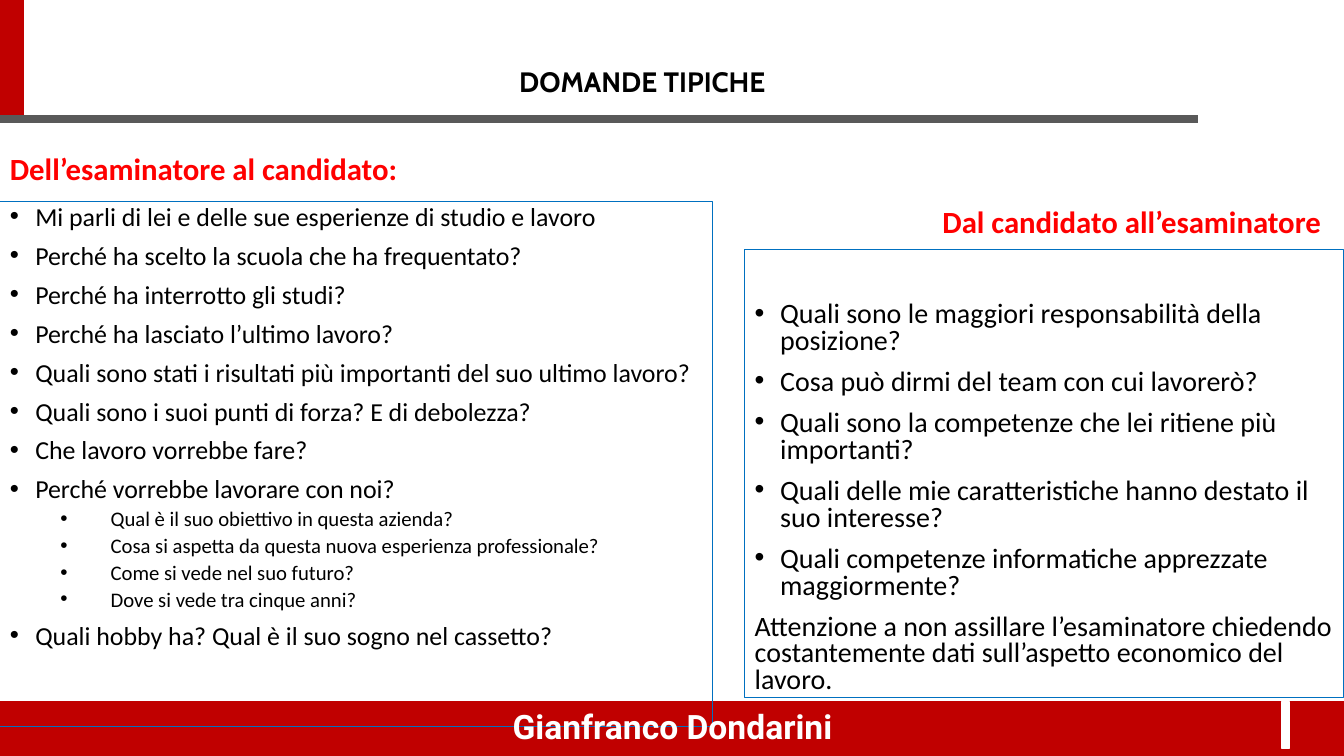
from lxml.etree import SubElement
from pptx import Presentation
from pptx.dml.color import RGBColor
from pptx.enum.shapes import MSO_CONNECTOR as Connector, MSO_SHAPE as Shape
from pptx.enum.text import MSO_ANCHOR as Anchor, PP_ALIGN as Align
from pptx.oxml.ns import qn
from pptx.util import Cm, Pt

BRAND_RED = RGBColor(0xC0, 0x00, 0x00)
HEADING_RED = RGBColor(0xFF, 0x00, 0x00)
GREY = RGBColor(0x59, 0x59, 0x59)
BLUE = RGBColor(0x00, 0x70, 0xC0)
BLACK = RGBColor(0x00, 0x00, 0x00)
WHITE = RGBColor(0xFF, 0xFF, 0xFF)

EXAMINER_QUESTIONS = [
    "Mi parli di lei e delle sue esperienze di studio e lavoro",
    "Perché ha scelto la scuola che ha frequentato?",
    "Perché ha interrotto gli studi?",
    "Perché ha lasciato l’ultimo lavoro?",
    "Quali sono stati i risultati più importanti del suo ultimo lavoro?",
    "Quali sono i suoi punti di forza? E di debolezza?",
    "Che lavoro vorrebbe fare?",
    "Perché vorrebbe lavorare con noi?",
]
COMPANY_QUESTIONS = [
    "Qual è il suo obiettivo in questa azienda?",
    "Cosa si aspetta da questa nuova esperienza professionale?",
    "Come si vede nel suo futuro?",
    "Dove si vede tra cinque anni?",
]
CLOSING_QUESTION = "Quali hobby ha? Qual è il suo sogno nel cassetto?"
CANDIDATE_QUESTIONS = [
    "Quali sono le maggiori responsabilità della posizione?",
    "Cosa può dirmi del team con cui lavorerò?",
    "Quali sono la competenze che lei ritiene più importanti?",
    "Quali delle mie caratteristiche hanno destato il suo interesse?",
    "Quali competenze informatiche apprezzate maggiormente?",
]
WARNING = ("Attenzione a non assillare l’esaminatore chiedendo costantemente "
           "dati sull’aspetto economico del lavoro.")


def write(paragraph, text, size=20, font="Calibri", color=BLACK, bold=False,
          align=Align.LEFT, line_spacing=None, before=0, indent=None, level=0):
    """Fill one paragraph; indent is (left margin, hanging) in cm and adds a bullet."""
    paragraph.level = level
    paragraph.alignment = align
    paragraph.space_before = Pt(before)
    if line_spacing:
        paragraph.line_spacing = line_spacing
    if indent:
        margin, hanging = indent
        properties = paragraph._p.get_or_add_pPr()
        properties.set("marL", str(Cm(margin)))
        properties.set("indent", str(-Cm(hanging)))
        SubElement(properties, qn("a:buFont"), typeface="Arial")
        SubElement(properties, qn("a:buChar"), char="•")
    run = paragraph.add_run()
    run.text = text
    run.font.size = Pt(size)
    run.font.name = font
    run.font.bold = bold
    run.font.color.rgb = color


class QuestionSlide:
    bullet = dict(indent=(0.64, 0.64), before=10, line_spacing=0.8)
    sub_bullet = dict(indent=(2.54, 1.27), before=5, line_spacing=0.8, level=1)
    plain = dict(before=10, line_spacing=0.8)

    def __init__(self, slide):
        self.shapes = slide.shapes

    def bar(self, left, top, width, height, color):
        shape = self.shapes.add_shape(Shape.RECTANGLE, Cm(left), Cm(top), Cm(width), Cm(height))
        shape.shadow.inherit = False
        shape.fill.solid()
        shape.fill.fore_color.rgb = color
        shape.line.color.rgb = color
        shape.line.width = Pt(1)

    def line(self, x1, y1, x2, y2, color, width):
        line = self.shapes.add_connector(Connector.STRAIGHT, Cm(x1), Cm(y1), Cm(x2), Cm(y2))
        line.line.color.rgb = color
        line.line.width = Pt(width)
        SubElement(line._element.spPr, qn("a:effectLst"))

    def label(self, text, left, top, width, height, wrap=True, anchor=Anchor.TOP, **style):
        box = self.shapes.add_textbox(Cm(left), Cm(top), Cm(width), Cm(height))
        frame = box.text_frame
        frame.word_wrap = wrap
        frame.vertical_anchor = anchor
        write(frame.paragraphs[0], text, **style)

    def panel(self, items, left, top, width, height, top_inset=0.13):
        """Outlined box of (text, style) paragraphs."""
        box = self.shapes.add_textbox(Cm(left), Cm(top), Cm(width), Cm(height))
        box.line.color.rgb = BLUE
        box.line.width = Pt(0.75)
        frame = box.text_frame
        frame.word_wrap = True
        frame.margin_top = Cm(top_inset)
        frame.margin_bottom = 0
        for index, (text, style) in enumerate(items):
            paragraph = frame.add_paragraph() if index else frame.paragraphs[0]
            write(paragraph, text, **(style if index else {**style, "before": 0}))


def main():
    presentation = Presentation()
    presentation.slide_width = Cm(33.87)
    presentation.slide_height = Cm(19.05)
    page = QuestionSlide(presentation.slides.add_slide(presentation.slide_layouts[6]))

    # Footer band and header rules
    page.bar(0, 17.68, 33.87, 1.37, BRAND_RED)
    page.bar(32.31, 17.68, 0.18, 1.19, WHITE)
    page.line(0.3, 0, 0.3, 3, BRAND_RED, 17.25)
    page.line(0, 3, 30.2, 3, GREY, 5.5)

    # Title
    page.label("DOMANDE TIPICHE", 6.17, 0.79, 20.04, 2.54, anchor=Anchor.MIDDLE,
               font="Cabin", bold=True, align=Align.CENTER)

    # Question panels
    main_style = dict(page.bullet, size=18.5)
    sub_style = dict(page.sub_bullet, size=14.8)
    page.panel([(text, main_style) for text in EXAMINER_QUESTIONS]
               + [(text, sub_style) for text in COMPANY_QUESTIONS]
               + [(CLOSING_QUESTION, main_style)], 0, 5.08, 17.96, 13.23)
    page.panel([(text, page.bullet) for text in CANDIDATE_QUESTIONS]
               + [(WARNING, page.plain)], 18.77, 6.3, 15.1, 11.28, top_inset=1.32)

    # Panel headings
    heading = dict(size=22, color=HEADING_RED, bold=True, wrap=False)
    page.label("Dell’esaminatore al candidato:", 0, 3.66, 10.39, 1.19, **heading)
    page.label("Dal candidato all’esaminatore", 23.5, 4.98, 10.16, 1.19, **heading)

    # Footer name
    page.label("Gianfranco Dondarini", 11.23, 17.78, 11.43, 1.02, anchor=Anchor.MIDDLE,
               size=24, font="Roboto", color=WHITE, bold=True, align=Align.CENTER)

    presentation.save("out.pptx")


if __name__ == "__main__":
    main()
